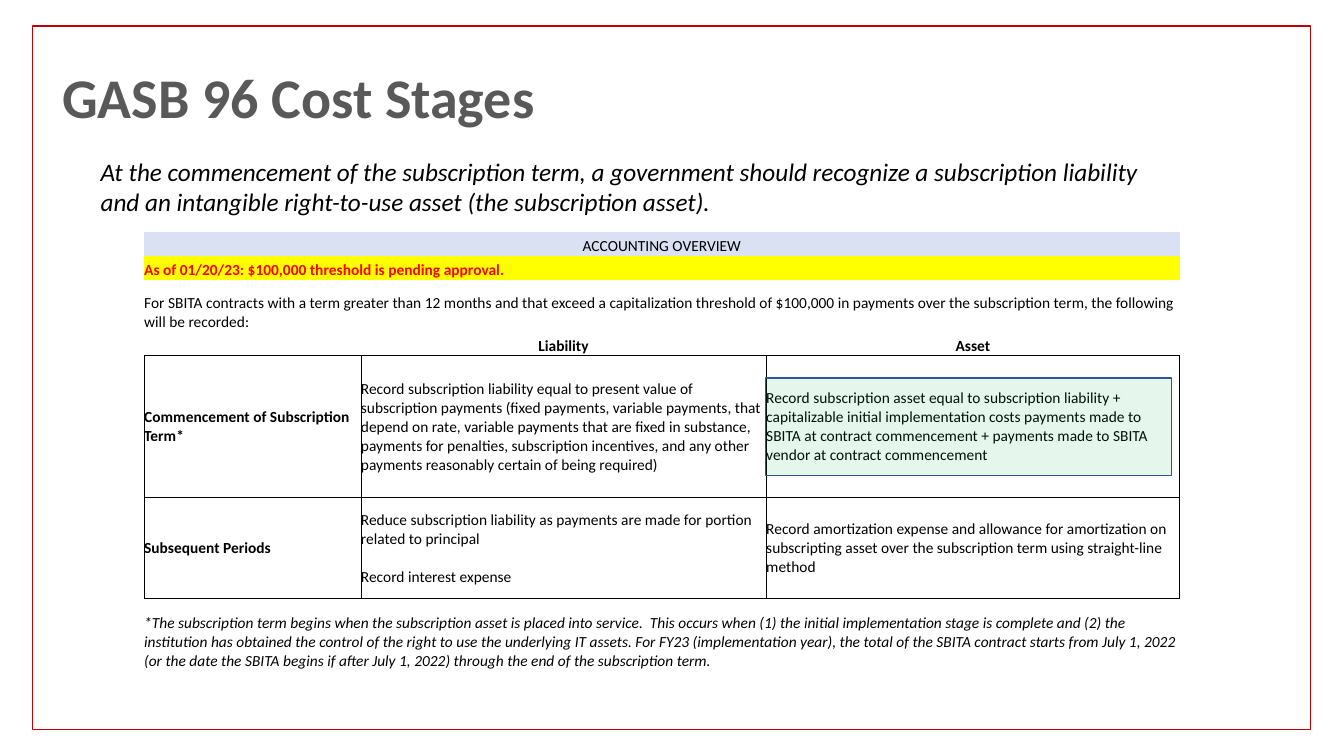
from pptx import Presentation
from pptx.util import Inches, Pt
from pptx.dml.color import RGBColor
from pptx.enum.shapes import MSO_SHAPE as Shape
from pptx.enum.text import PP_ALIGN as Align, MSO_ANCHOR as Anchor, MSO_AUTO_SIZE as Fit
from pptx.oxml.ns import qn
from lxml.etree import SubElement as Sub


def rgb(code):
    return RGBColor.from_string(code)


def write(para, text, size, color="000000", bold=False, italic=False):
    for i, line in enumerate(text.split("\n")):
        if i:
            para.add_line_break()
        if line:
            run = para.add_run()
            run.text = line
            font = run.font
            font.name, font.size = "Calibri", Pt(size)
            font.bold, font.italic = bold, italic
            font.color.rgb = rgb(color)


prs = Presentation()
prs.slide_width, prs.slide_height = Inches(13.33), Inches(7.5)
slide = prs.slides.add_slide(prs.slide_layouts[6])
shapes = slide.shapes

# Title
box = shapes.add_textbox(Inches(0.52), Inches(0.71), Inches(10.87), Inches(0.64))
frame = box.text_frame
frame.word_wrap = True
frame.vertical_anchor = Anchor.BOTTOM
frame.paragraphs[0].line_spacing = 0.9
write(frame.paragraphs[0], "GASB 96 Cost Stages", 40, "595959", bold=True)

# Red page frame
edge = shapes.add_shape(Shape.RECTANGLE, Inches(0.32), Inches(0.26), Inches(12.68), Inches(6.98))
edge.shadow.inherit = False
edge.fill.background()
edge.line.color.rgb = rgb("C00000")
edge.line.width = Pt(1)

# Table content: text, fill, borders; a single cell spans the row
WHITE = "FFFFFF"
ALL = "LRTB"
rows = [
    (0.52, WHITE, "", [""]),
    (0.24, WHITE, "", ["", "", ""]),
    (0.24, "D9E1F2", "", ["ACCOUNTING OVERVIEW"]),
    (0.24, "FFFF00", "", ["As of 01/20/23: $100,000 threshold is pending approval."]),
    (0.51, None, "", [
        "For SBITA contracts with a term greater than 12 months and that exceed a capitalization "
        "threshold of $100,000 in payments over the subscription term, the following will be recorded:"]),
    (0.24, WHITE, "B", ["", "Liability", "Asset"]),
    (1.41, WHITE, ALL, [
        "Commencement of Subscription Term*",
        "Record subscription liability equal to present value of subscription payments (fixed "
        "payments, variable payments, that depend on rate, variable payments that are fixed in "
        "substance, payments for penalties, subscription incentives, and any other payments "
        "reasonably certain of being required)",
        "Record subscription asset equal to subscription liability + capitalizable initial "
        "implementation costs payments made to SBITA at contract commencement + payments made "
        "to SBITA vendor at contract commencement"]),
    (1.0, WHITE, ALL, [
        "Subsequent Periods",
        "Reduce subscription liability as payments are made for portion related to principal"
        "\n\nRecord interest expense",
        "Record amortization expense and allowance for amortization on subscripting asset over "
        "the subscription term using straight-line method"]),
    (0.87, WHITE, "T", [
        "*The subscription term begins when the subscription asset is placed into service.  This "
        "occurs when (1) the initial implementation stage is complete and (2) the institution has "
        "obtained the control of the right to use the underlying IT assets. For FY23 "
        "(implementation year), the total of the SBITA contract starts from July 1, 2022 (or the "
        "date the SBITA begins if after July 1, 2022) through the end of the subscription term."]),
]

# Table
grid = shapes.add_table(len(rows), 3, Inches(1.43), Inches(1.54), Inches(10.27), Inches(5.27))
table = grid.table
table.first_row = table.horz_banding = False
table._tbl.tblPr.find(qn("a:tableStyleId")).text = "{2D5ABB26-0587-4C30-8999-92F81FD0307C}"
for col, width in zip(table.columns, (2.15, 4.02, 4.1)):
    col.width = Inches(width)

for r, (height, fill, sides, texts) in enumerate(rows):
    table.rows[r].height = Inches(height)
    if len(texts) == 1:
        table.cell(r, 0).merge(table.cell(r, 2))
    for c in range(3):
        cell = table.cell(r, c)
        cell.margin_left = cell.margin_right = cell.margin_top = cell.margin_bottom = 0
        cell.vertical_anchor = Anchor.MIDDLE if r > 5 else Anchor.BOTTOM
        props = cell._tc.get_or_add_tcPr()
        for side in sides:
            line = Sub(props, qn("a:ln" + side), w=str(Pt(0.5)))
            Sub(Sub(line, qn("a:solidFill")), qn("a:srgbClr"), val="000000")
        if fill:
            cell.fill.solid()
            cell.fill.fore_color.rgb = rgb(fill)
        else:
            cell.fill.background()
        para = cell.text_frame.paragraphs[0]
        if r in (2, 5):
            para.alignment = Align.CENTER
        if c < len(texts):
            write(para, texts[c], 11, "FF0000" if r == 3 else "000000",
                  bold=r in (3, 5) or (r in (6, 7) and c == 0), italic=r == 8)
        # Keeps blank cells and blank lines at body size
        para._p.get_or_add_endParaRPr().set("sz", "1100")
        for gap in para._p.findall(qn("a:br")):
            Sub(gap, qn("a:rPr"), sz="1100")

# Lead sentence
box = shapes.add_textbox(Inches(0.9), Inches(1.5), Inches(10.87), Inches(0.71))
frame = box.text_frame
frame.word_wrap = True
frame.auto_size = Fit.SHAPE_TO_FIT_TEXT
write(frame.paragraphs[0],
      "At the commencement of the subscription term, a government should recognize a subscription "
      "liability and an intangible right-to-use asset (the subscription asset).", 18, italic=True)

# Green highlight over the asset cell
mark = shapes.add_shape(Shape.RECTANGLE, Inches(7.59), Inches(3.75), Inches(4.03), Inches(0.97))
mark.shadow.inherit = False
mark.fill.solid()
mark.fill.fore_color.rgb = rgb("00B050")
tint = mark.fill._xPr.find(qn("a:solidFill"))[0]
Sub(tint, qn("a:alpha"), val="10000")
mark.line.color.rgb = rgb("325491")
mark.line.width = Pt(1)

prs.save("out.pptx")
